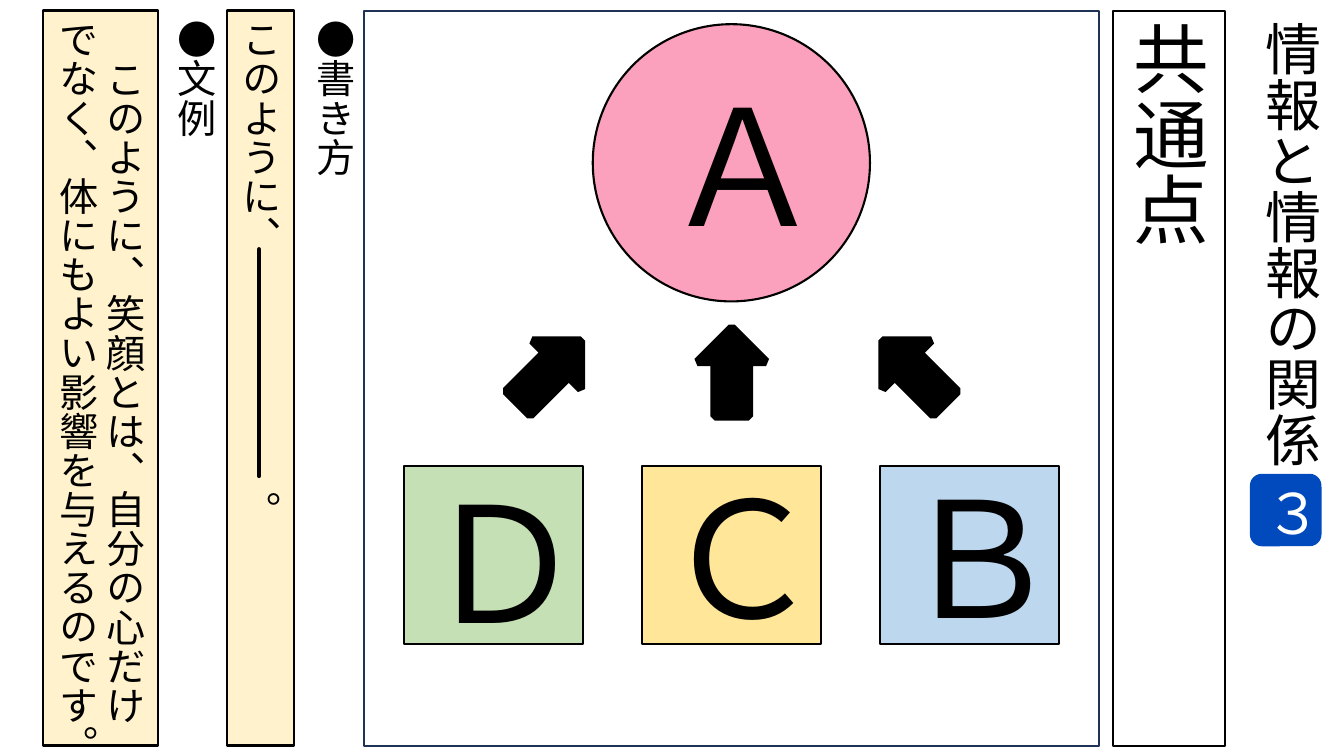
from lxml.etree import SubElement
from pptx import Presentation
from pptx.dml.color import RGBColor
from pptx.enum.shapes import MSO_CONNECTOR as Connector, MSO_SHAPE as Shape
from pptx.enum.text import MSO_AUTO_SIZE as AutoSize, PP_ALIGN as Align
from pptx.oxml.ns import qn
from pptx.util import Pt

FONT = "Roboto"
BLACK, WHITE, CREAM = "000000", "FFFFFF", "FFF2CC"
COLUMN_TOP, COLUMN_HEIGHT = 7.5, 525
BODY_SIZE, LETTER_SIZE = 28, 115


def color(value):
    """Turn a hex string into a colour."""
    return RGBColor.from_string(value)


def write(box, text, size, font=FONT, fill=BLACK, wrap=True, indent=0, tab=0):
    """Write one vertical paragraph into a box."""
    frame = box.text_frame
    formats = {"word_wrap": wrap, "auto_size": AutoSize.SHAPE_TO_FIT_TEXT}
    for name, value in formats.items():
        setattr(frame, name, value)
    frame._txBody.bodyPr.set("vert", "eaVert")
    para = frame.paragraphs[0]
    para.alignment = Align.LEFT
    properties = para._p.get_or_add_pPr()
    if indent:
        properties.set("indent", str(Pt(indent)))
    if tab:
        stops = SubElement(properties, qn("a:tabLst"))
        SubElement(stops, qn("a:tab"), pos=str(Pt(tab)), algn="l")
    span = para.add_run()
    span.text = text
    for name, value in {"name": font, "size": Pt(size)}.items():
        setattr(span.font, name, value)
    span.font.color.rgb = color(fill)
    SubElement(span._r.get_or_add_rPr(), qn("a:ea"), typeface=font)


def add_text(page, place, text, size, **options):
    """Add a text box with vertical text."""
    box = page.shapes.add_textbox(*map(Pt, place))
    write(box, text, size, **options)


def add_box(page, kind, place, fill=None, line=None, width=1.5):
    """Add a flat preset shape."""
    box = page.shapes.add_shape(kind, *map(Pt, place))
    box.shadow.inherit = False
    if fill:
        box.fill.solid()
        box.fill.fore_color.rgb = color(fill)
    else:
        box.fill.background()
    if line:
        box.line.color.rgb = color(line)
        box.line.width = Pt(width)
    else:
        box.line.fill.background()
    return box


def add_arrow(page, center, rotation):
    """Add a thick black arrow turned around its centre."""
    arrow = add_box(page, Shape.RIGHT_ARROW, (center - 31.7, 241.2, 63.4, 49), BLACK, BLACK, 6)
    arrow.rotation = rotation
    SubElement(arrow.line._get_or_add_ln(), qn("a:bevel"))


def add_blank_line(page, x, top, bottom):
    """Add the vertical rule that stands for the words to fill in."""
    rule = page.shapes.add_connector(Connector.STRAIGHT, *map(Pt, (x, top, x, bottom)))
    rule.line.color.rgb = color(BLACK)
    rule.line.width = Pt(3)
    rule.line._get_or_add_ln().set("cap", "rnd")
    SubElement(rule._element.spPr, qn("a:effectLst"))


def add_titles(page):
    """Add the heading and the topic at the right edge."""
    topic = add_box(page, Shape.RECTANGLE, (795, 8, 80, COLUMN_HEIGHT), line=BLACK)
    write(topic, "共通点", 54, font="Noto Sans CJK JP")
    add_text(page, (887, 8, 63.4, 330.5), "情報と情報の関係", 40, wrap=False)
    add_box(page, Shape.ROUNDED_RECTANGLE, (892.8, 338.4, 51.2, 51.8), "004ABD")
    add_text(page, (887, 339.8, 63.4, 47.5), "３", 40, fill=WHITE, wrap=False)


def add_diagram(page):
    """Add the framed diagram of three boxes that lead to A."""
    add_box(page, Shape.RECTANGLE, (260, 8, 525, 525), WHITE, "1E3256")
    add_box(page, Shape.OVAL, (423.4, 17.3, 198, 198), "FBA1BD", BLACK)
    add_text(page, (445.7, 54.7, 154, 123), "Ａ", LETTER_SIZE, wrap=False)
    parts = [("Ｄ", "C5E0B4", 315, 338.4), ("Ｃ", "FFE699", 270, 334.8), ("Ｂ", "BDD7EE", 225, 334.8)]
    for index, (letter, fill, rotation, top) in enumerate(parts):
        left = 288.7 + 170 * index
        add_box(page, Shape.RECTANGLE, (left, 332.6, 127.5, 127.5), fill, BLACK)
        add_text(page, (left - 14.5, top, 154, 123), letter, LETTER_SIZE, wrap=False)
        add_arrow(page, 522.7 + 130.2 * (index - 1), rotation)


def add_writing_guide(page):
    """Add the pattern and the example with their headings."""
    for left, heading in ((211, "●書き方"), (112.3, "●文例")):
        add_text(page, (left, COLUMN_TOP, 48.2, COLUMN_HEIGHT), heading, BODY_SIZE)
    columns = [
        (162, 48.2, "このように、\t。", {"tab": 12 * BODY_SIZE}),
        (31, 82, "このように、笑顔とは、自分の心だけでなく、体にもよい影響を与えるのです。",
         {"indent": BODY_SIZE}),
    ]
    for left, width, text, options in columns:
        place = (left, COLUMN_TOP, width, COLUMN_HEIGHT)
        write(add_box(page, Shape.RECTANGLE, place, CREAM, BLACK), text, BODY_SIZE, **options)
    add_blank_line(page, 185, 178, 340)


def main():
    """Build the slide and save it."""
    deck = Presentation()
    deck.slide_width, deck.slide_height = Pt(960), Pt(540)
    page = deck.slides.add_slide(deck.slide_layouts[6])
    add_titles(page)
    add_diagram(page)
    add_writing_guide(page)
    deck.save("out.pptx")


if __name__ == "__main__":
    main()
